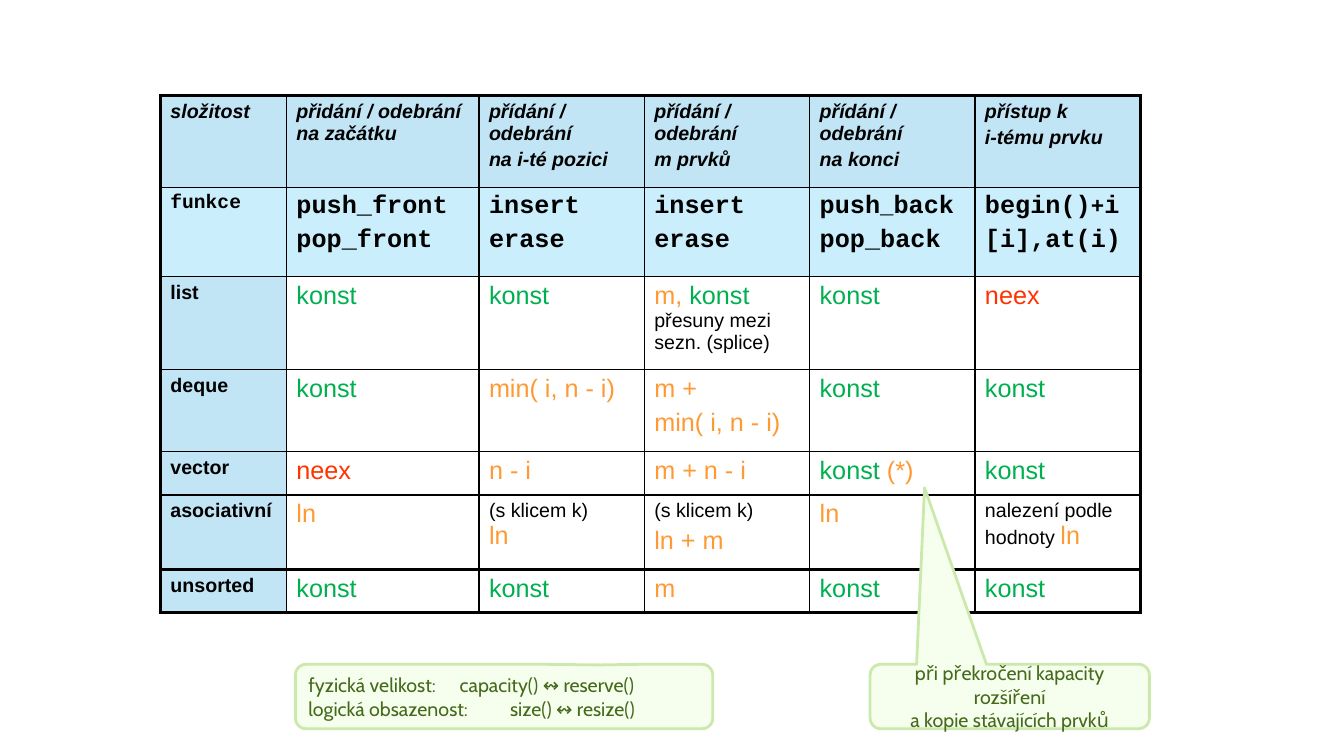
from lxml import etree
from pptx import Presentation
from pptx.dml.color import RGBColor
from pptx.enum.shapes import MSO_SHAPE
from pptx.enum.text import MSO_ANCHOR, PP_ALIGN
from pptx.oxml.ns import qn
from pptx.util import Inches, Pt

CALLOUT = MSO_SHAPE.ROUNDED_RECTANGULAR_CALLOUT
MIDDLE = MSO_ANCHOR.MIDDLE
LEFT, CENTER = PP_ALIGN.LEFT, PP_ALIGN.CENTER

THEME = {
    "header_fill": "C1E5F5",
    "function_fill": "CAEEFB",
    "border": "000000",
    "callout_fill": "F6FFED",
    "callout_line": "CCE9AD",
    "thin": 1,
    "thick": 2.25,
    "callout_width": 2,
    # font name, size, colour, bold, italic
    "styles": {
        "heading": ("Arial", 14, "000000", True, True),
        "label": ("Arial", 14, "000000", True, False),
        "code_label": ("Courier New", 14, "000000", True, False),
        "code": ("Courier New", 18, "000000", True, False),
        "small_code": ("Courier New", 16, "000000", True, False),
        "constant": ("Arial", 18, "00B050", False, False),
        "growing": ("Arial", 18, "FF9933", False, False),
        "missing": ("Arial", 18, "FF3300", False, False),
        "note": ("Arial", 14, "000000", False, False),
        "callout": ("Cabin", 14, "456A1C", False, False),
    },
}


def write_text(text_frame, paragraphs, alignment=LEFT, spacing=0.2):
    """Fill the frame; a paragraph alternates style and text, "\n" breaks a line.

    Spacing before each later paragraph is a share of its first type size.
    """
    text_frame.word_wrap = True
    for index, parts in enumerate(paragraphs):
        paragraph = text_frame.paragraphs[0] if index == 0 else text_frame.add_paragraph()
        paragraph.alignment = alignment
        if index:
            paragraph.space_before = Pt(spacing * THEME["styles"][parts[0]][1])
        for style, text in zip(parts[::2], parts[1::2]):
            name, size, color, bold, italic = THEME["styles"][style]
            formats = {"name": name, "size": Pt(size), "bold": bold, "italic": italic}
            for line_index, line in enumerate(text.split("\n")):
                if line_index:
                    paragraph.add_line_break()
                if not line:
                    continue
                run = paragraph.add_run()
                run.text = line
                for attribute, value in formats.items():
                    setattr(run.font, attribute, value)
                run.font.color.rgb = RGBColor.from_string(color)


def set_borders(cell, widths):
    """Draw the cell's left, right, top and bottom borders, widths in points."""
    properties = cell._tc.get_or_add_tcPr()
    for position, (side, width) in enumerate(zip("LRTB", widths)):
        line = etree.Element(qn(f"a:ln{side}"), w=str(Pt(width)))
        solid = etree.SubElement(line, qn("a:solidFill"))
        etree.SubElement(solid, qn("a:srgbClr"), val=THEME["border"])
        properties.insert(position, line)


presentation = Presentation()
presentation.slide_width = Inches(13.33)
presentation.slide_height = Inches(7.5)
slide = presentation.slides.add_slide(presentation.slide_layouts[6])

# Complexity table
constant = [("constant", "konst")]
missing = [("missing", "neex")]
logarithm = [("growing", "ln")]
insert_erase = [("code", "insert"), ("code", "erase")]
change = ("heading", "přídání / odebrání")

rows = [
    [
        [("heading", "složitost")],
        [("heading", "přidání / odebrání na začátku")],
        [change, ("heading", "na i-té pozici")],
        [change, ("heading", "m prvků")],
        [change, ("heading", "na konci")],
        [("heading", "přístup k"), ("heading", "i-tému prvku")],
    ],
    [
        [("code_label", "funkce")],
        [("code", "push_front"), ("code", "pop_front")],
        insert_erase,
        insert_erase,
        [("code", "push", "small_code", "_", "code", "back"), ("code", "pop_back")],
        [("code", "begin()", "small_code", "+", "code", "i"), ("code", "[i],at(i)")],
    ],
    [
        [("label", "list")],
        constant,
        constant,
        [("growing", "m, ", "constant", "konst\n", "note", "přesuny mezi sezn. (splice)")],
        constant,
        missing,
    ],
    [
        [("label", "deque")],
        constant,
        [("growing", "min( i, n - i)")],
        [("growing", "m +"), ("growing", "min( i, n - i)")],
        constant,
        constant,
    ],
    [
        [("label", "vector")],
        missing,
        [("growing", "n - i")],
        [("growing", "m + n - i")],
        [("constant", "konst ", "growing", "(*)")],
        constant,
    ],
    [
        [("label", "asociativní")],
        logarithm,
        [("note", "(s klicem k)\n", "growing", "ln")],
        [("note", "(s klicem k)"), ("growing", "ln + m")],
        logarithm,
        [("note", "nalezení podle hodnoty ", "growing", "ln")],
    ],
    [[("label", "unsorted")], constant, constant, [("growing", "m")], constant, constant],
]
column_widths = [1.25, 1.91] + [1.64] * 4
row_heights = [0.91, 0.88, 0.93, 0.81, 0.43, 0.74, 0.43]

table = slide.shapes.add_table(
    len(rows), len(column_widths), Inches(1.59), Inches(0.95),
    Inches(sum(column_widths)), Inches(sum(row_heights)),
).table
table.first_row = False
table.horz_banding = False
for column, width in zip(table.columns, column_widths):
    column.width = Inches(width)
for row, height in zip(table.rows, row_heights):
    row.height = Inches(height)

thin, thick = THEME["thin"], THEME["thick"]
vertical_lines = [thick] + [thin] * (len(column_widths) - 1) + [thick]
horizontal_lines = [thick] + [thin] * 4 + [thick] * 3
for row_index, row in enumerate(rows):
    for column_index, paragraphs in enumerate(row):
        cell = table.cell(row_index, column_index)
        write_text(cell.text_frame, paragraphs)
        if row_index == 1 or row_index == 0 or column_index == 0:
            fill = "function_fill" if row_index == 1 else "header_fill"
            cell.fill.solid()
            cell.fill.fore_color.rgb = RGBColor.from_string(THEME[fill])
        else:
            cell.fill.background()
        set_borders(cell, vertical_lines[column_index:column_index + 2]
                    + horizontal_lines[row_index:row_index + 2])

# Callouts: left, width, pointer tip, alignment, paragraphs
callouts = [
    (8.63, 2.77, (-0.305, -3.236), CENTER,
     [("callout", "při překročení kapacity rozšíření\na kopie stávajících prvků")]),
    (2.93, 4.14, (0.231, -0.489), LEFT,
     [("callout", "fyzická velikost:\tcapacity() ↭ reserve()"),
      ("callout", "logická obsazenost:\tsize() ↭ resize()")]),
]
for left, width, tip, alignment, paragraphs in callouts:
    callout = slide.shapes.add_shape(
        CALLOUT, Inches(left), Inches(6.59), Inches(width), Inches(0.64))
    callout.adjustments[0], callout.adjustments[1] = tip
    callout.shadow.inherit = False
    callout.fill.solid()
    callout.fill.fore_color.rgb = RGBColor.from_string(THEME["callout_fill"])
    callout.line.color.rgb = RGBColor.from_string(THEME["callout_line"])
    callout.line.width = Pt(THEME["callout_width"])
    callout.text_frame.vertical_anchor = MIDDLE
    write_text(callout.text_frame, paragraphs, alignment, spacing=0)

presentation.save("out.pptx")
